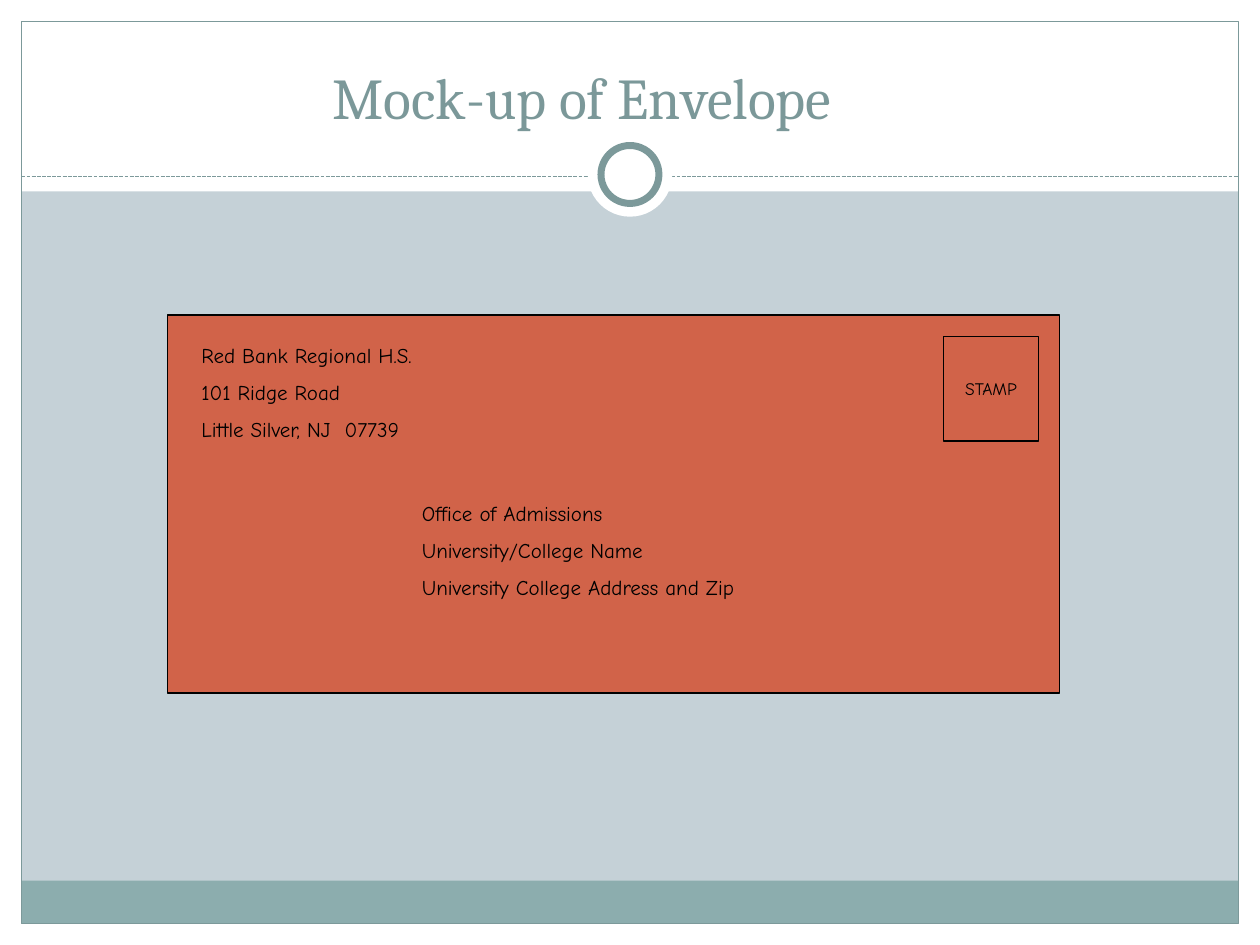
from pptx import Presentation
from pptx.dml.color import RGBColor
from pptx.enum.dml import MSO_LINE
from pptx.enum.shapes import MSO_CONNECTOR, MSO_SHAPE
from pptx.enum.text import MSO_ANCHOR, MSO_AUTO_SIZE, PP_ALIGN
from pptx.oxml.ns import qn
from pptx.util import Inches, Pt
from lxml import etree

RECT, OVAL = MSO_SHAPE.RECTANGLE, MSO_SHAPE.OVAL
STRAIGHT, DASH = MSO_CONNECTOR.STRAIGHT, MSO_LINE.SQUARE_DOT
CENTER, MIDDLE, BOTTOM = PP_ALIGN.CENTER, MSO_ANCHOR.MIDDLE, MSO_ANCHOR.BOTTOM
FIT_SHAPE, NO_AUTOFIT = MSO_AUTO_SIZE.SHAPE_TO_FIT_TEXT, MSO_AUTO_SIZE.NONE

WHITE = RGBColor(0xFF, 0xFF, 0xFF)
BLACK = RGBColor(0x00, 0x00, 0x00)
BACKGROUND = RGBColor(0xC5, 0xD1, 0xD7)
FOOTER = RGBColor(0x8C, 0xAD, 0xAE)
FRAME = RGBColor(0x7C, 0x99, 0x9A)
TITLE = RGBColor(0x7B, 0x98, 0x99)
ENVELOPE = RGBColor(0xD1, 0x63, 0x49)

TITLE_FONT, BODY_FONT = "Cambria", "Comic Neue"
WIDTH, HEIGHT, MARGIN = 10, 7.5, 0.17

SENDER = ["Red Bank Regional H.S.", "101 Ridge Road", "Little Silver, NJ  07739"]
RECIPIENT = ["Office of Admissions", "University/College Name",
             "University College Address and Zip"]


def add_shape(s, kind, x, y, w, h, fill=None, line=None, weight=0.75):
    sp = s.shapes.add_shape(kind, Inches(x), Inches(y), Inches(w), Inches(h))
    sp.shadow.inherit = False
    if fill is None:
        sp.fill.background()
    else:
        sp.fill.solid()
        sp.fill.fore_color.rgb = fill
    if line is None:
        sp.line.fill.background()
    else:
        sp.line.color.rgb = line
        sp.line.width = Pt(weight)
    return sp


def style(p, font, size, color):
    p.font.name = font
    p.font.size = Pt(size)
    p.font.color.rgb = color


def add_frame(s, w, h, header=1.52, rule_y=1.4, ring_y=1.385):
    """Draw the white margins, footer band, border, dashed rule and ring."""
    for box in ((0, h - MARGIN, w, MARGIN), (0, 0, w, header),
                (0, 0, MARGIN, h), (w - MARGIN, 0, MARGIN, h)):
        add_shape(s, RECT, *box, fill=WHITE)
    inner_w = w - 2 * MARGIN
    add_shape(s, RECT, MARGIN, 6.99, inner_w, 0.34, FOOTER)
    add_shape(s, RECT, MARGIN, MARGIN, inner_w, h - 2 * MARGIN, line=FRAME)

    rule = s.shapes.add_connector(STRAIGHT, Inches(MARGIN), Inches(rule_y),
                                  Inches(w - MARGIN), Inches(rule_y))
    rule.line.color.rgb = FRAME
    rule.line.width = Pt(0.75)
    rule.line.dash_style = DASH
    etree.SubElement(rule._element.spPr, qn("a:effectLst"))

    for size, line in ((0.67, None), (0.46, FRAME)):
        add_shape(s, OVAL, (w - size) / 2, ring_y - size / 2, size, size,
                  WHITE, line, 4)


def place_title(s, text, x, y, w, h):
    title = s.shapes.title
    title.left, title.top = Inches(x), Inches(y)
    title.width, title.height = Inches(w), Inches(h)
    tf = title.text_frame
    tf.text = text
    tf.vertical_anchor = BOTTOM
    tf.auto_size = NO_AUTOFIT
    p = tf.paragraphs[0]
    p.alignment = CENTER
    style(p, TITLE_FONT, 33, TITLE)
    # Bring the title in front of the white header band.
    title._element.getparent().append(title._element)


def add_address(s, lines, x, y, w, h=0.9):
    box = s.shapes.add_textbox(Inches(x), Inches(y), Inches(w), Inches(h))
    tf = box.text_frame
    tf.word_wrap = True
    tf.auto_size = FIT_SHAPE
    tf.text = "\n".join(lines)
    for p in tf.paragraphs:
        p.space_before = Pt(6.75)
        style(p, BODY_FONT, 12, BLACK)


def add_stamp(s, x, y, w, h):
    tf = add_shape(s, RECT, x, y, w, h, ENVELOPE, BLACK).text_frame
    tf.word_wrap = False
    tf.vertical_anchor = MIDDLE
    tf.text = "STAMP"
    p = tf.paragraphs[0]
    p.alignment = CENTER
    style(p, BODY_FONT, 10, BLACK)


def add_envelope(s, x, y, w, h):
    inset, stamp_w = 0.17, 0.75
    add_shape(s, RECT, x, y, w, h, ENVELOPE, BLACK)
    add_address(s, SENDER, x + inset, y + inset, 2.67)
    add_address(s, RECIPIENT, x + 1.92, y + 1.42, 4.08)
    add_stamp(s, x + w - inset - stamp_w, y + inset, stamp_w, 0.83)


def main():
    prs = Presentation()
    prs.slide_width, prs.slide_height = Inches(WIDTH), Inches(HEIGHT)
    s = prs.slides.add_slide(prs.slide_layouts.get_by_name("Title Only"))
    s.background.fill.solid()
    s.background.fill.fore_color.rgb = BACKGROUND
    add_frame(s, WIDTH, HEIGHT)
    place_title(s, "Mock-up of Envelope", 0.83, 0.42, 7.58, 0.67)
    add_envelope(s, 1.33, 2.5, 7.08, 3)
    prs.save("out.pptx")


if __name__ == "__main__":
    main()
